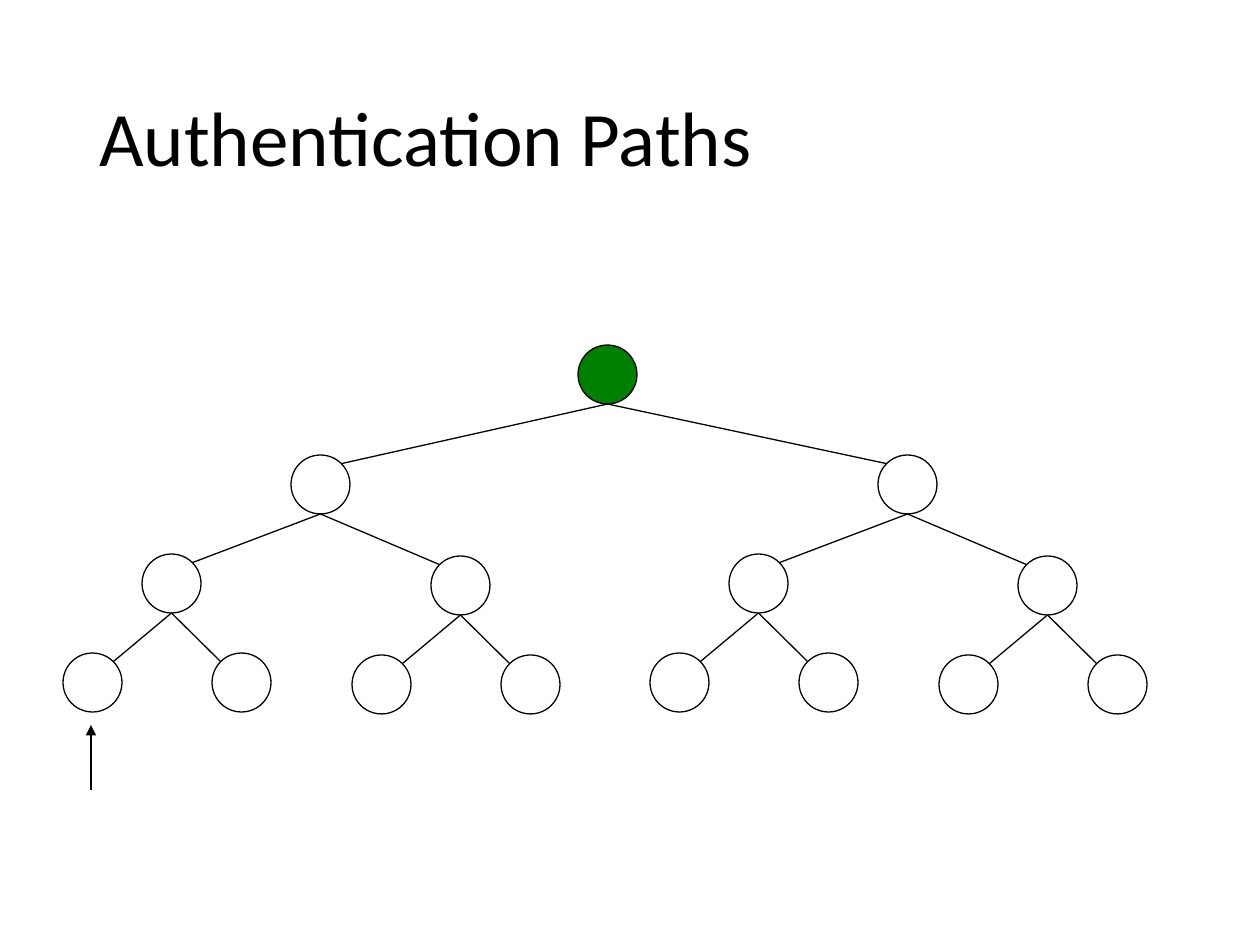
import math

from lxml import etree
from pptx import Presentation
from pptx import util as u
from pptx.dml.color import RGBColor
from pptx.enum import shapes, text
from pptx.oxml.ns import qn

BLACK = RGBColor(0x00, 0x00, 0x00)
WHITE = RGBColor(0xFF, 0xFF, 0xFF)
GREEN = RGBColor(0x00, 0x80, 0x00)

TITLE = "Authentication Paths"
TITLE_BOX = (87, 50, 1086, 183)
ROOT = (578, 345)
CHILD_OFFSETS = [
    [(-287, 110), (300, 110)],
    [(-149, 99), (140, 101)],
    [(-79, 99), (70, 99)],
]
NODE_SIZE = 59
POINTER = ((91, 790), (91, 725))


def px(value):
    return u.Emu(round(value * 914400 / 126))


def add_title(slide):
    frame = slide.shapes.add_textbox(*map(px, TITLE_BOX)).text_frame
    frame.word_wrap = True
    frame.vertical_anchor = text.MSO_ANCHOR.MIDDLE
    frame.text = TITLE
    paragraph = frame.paragraphs[0]
    paragraph.line_spacing = 0.9
    font = paragraph.runs[0].font
    font.name, font.size = "Calibri", u.Pt(44)
    font.color.rgb = BLACK


def add_line(slide, start, end, width=0.75):
    line = slide.shapes.add_connector(
        shapes.MSO_CONNECTOR.STRAIGHT, *map(px, (*start, *end)))
    line.line.color.rgb = BLACK
    line.line.width = u.Pt(width)
    etree.SubElement(line._element.spPr, qn("a:effectLst"))
    return line


def add_node(slide, left, top, fill):
    node = slide.shapes.add_shape(
        shapes.MSO_SHAPE.OVAL, px(left), px(top), px(NODE_SIZE), px(NODE_SIZE))
    node.shadow.inherit = False
    node.fill.solid()
    node.fill.fore_color.rgb = fill
    node.line.color.rgb = BLACK
    node.line.width = u.Pt(0.75)


def add_tree(slide, left, top, level=0):
    add_node(slide, left, top, WHITE if level else GREEN)
    if level == len(CHILD_OFFSETS):
        return
    radius = NODE_SIZE / 2
    diagonal = radius * math.sqrt(0.5)
    for dx, dy in CHILD_OFFSETS[level]:
        child_left, child_top = left + dx, top + dy
        add_tree(slide, child_left, child_top, level + 1)
        toward_parent = -math.copysign(diagonal, dx)
        add_line(slide, (left + radius, top + NODE_SIZE),
                 (child_left + radius + toward_parent, child_top + radius - diagonal))


def add_pointer(slide):
    pointer = add_line(slide, *POINTER, width=1.25)
    outline = pointer.line._get_or_add_ln()
    etree.SubElement(outline, qn("a:tailEnd"), type="triangle")


def main():
    presentation = Presentation()
    presentation.slide_width, presentation.slide_height = px(1260), px(945)
    slide = presentation.slides.add_slide(presentation.slide_layouts[6])
    add_title(slide)
    add_tree(slide, *ROOT)
    add_pointer(slide)
    presentation.save("out.pptx")


if __name__ == "__main__":
    main()
